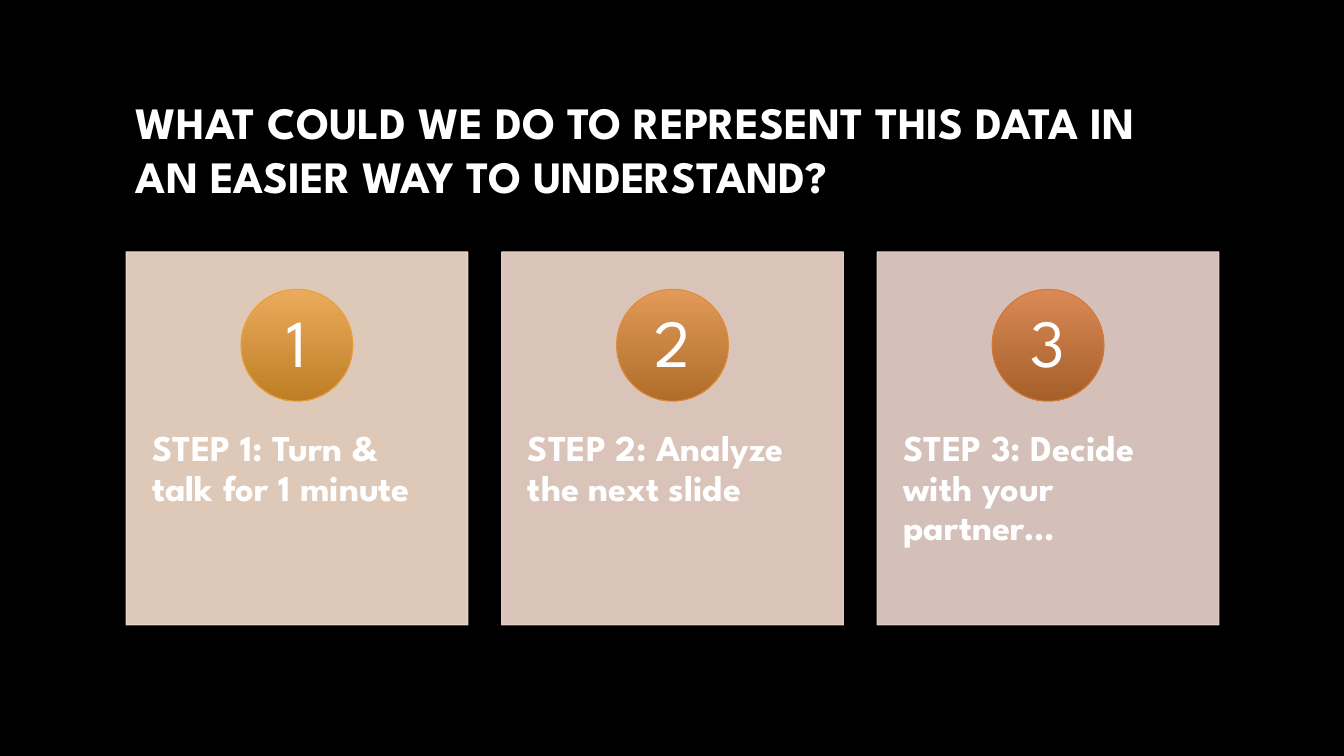
import pptx
import pptx.dml.color
import pptx.enum.shapes
import pptx.enum.text
import pptx.oxml
import pptx.oxml.ns
import pptx.util
from pptx.util import Inches

TITLE = "WHAT COULD WE DO TO REPRESENT THIS DATA IN AN EASIER WAY TO UNDERSTAND?"
STEPS = [
    {"number": "1", "text": "STEP 1: Turn & talk for 1 minute",
     "card": "F7DFCE", "top": "EBAB5C", "bottom": "BD7E25", "rim": "E9A039"},
    {"number": "2", "text": "STEP 2: Analyze the next slide",
     "card": "F2DACE", "top": "E29A59", "bottom": "AF6D29", "rim": "DF8C36"},
    {"number": "3", "text": "STEP 3: Decide with your partner…",
     "card": "EDD5CE", "top": "D98957", "bottom": "A65F28", "rim": "D57A34"},
]
THEME = {
    "font": "League Spartan", "background": "000000", "text": "FFFFFF",
    "title_size": 32, "step_size": 26, "number_size": 48,
    "line_width": 0.75, "card_opacity": 90,
}

SLIDE_WIDTH, SLIDE_HEIGHT = 13.33, 7.5
LEFT, CARD_TOP, CARD_WIDTH, CARD_HEIGHT = 1.25, 2.5, 3.39, 3.7
CARD_PITCH = 3.725
CIRCLE_TOP, CIRCLE_SIZE = 2.87, 1.11
STEP_TOP, STEP_HEIGHT = 3.91, 2.22

SHAPES = pptx.enum.shapes.MSO_SHAPE
ANCHOR = pptx.enum.text.MSO_ANCHOR
ALIGN = pptx.enum.text.PP_ALIGN


def color(value):
    return pptx.dml.color.RGBColor.from_string(value)


def write_text(shape, text, size, bold=False, align=ALIGN.LEFT,
               anchor=ANCHOR.TOP, insets=(0.1, 0.05), spacing=1.0):
    frame = shape.text_frame
    frame.word_wrap = True
    frame.vertical_anchor = anchor
    frame.margin_left = frame.margin_right = Inches(insets[0])
    frame.margin_top = frame.margin_bottom = Inches(insets[1])
    para = frame.paragraphs[0]
    para.alignment = align
    para.line_spacing = spacing
    span = para.add_run()
    span.text = text
    span.font.name = THEME["font"]
    span.font.size = pptx.util.Pt(size)
    span.font.bold = bold
    span.font.color.rgb = color(THEME["text"])


def add_outlined(page, kind, bounds, line):
    shape = page.shapes.add_shape(kind, *map(Inches, bounds))
    shape.shadow.inherit = False
    shape.line.color.rgb = color(line)
    shape.line.width = pptx.util.Pt(THEME["line_width"])
    return shape


def set_opacity(shape, percent):
    for node in shape.element.spPr.iter(pptx.oxml.ns.qn("a:srgbClr")):
        alpha = pptx.oxml.parse_xml(
            f'<a:alpha {pptx.oxml.ns.nsdecls("a")} val="{percent * 1000}"/>')
        node.append(alpha)


def add_step(page, index, step):
    left = LEFT + index * CARD_PITCH
    card = add_outlined(page, SHAPES.RECTANGLE,
                        (left, CARD_TOP, CARD_WIDTH, CARD_HEIGHT), step["card"])
    card.fill.solid()
    card.fill.fore_color.rgb = color(step["card"])
    set_opacity(card, THEME["card_opacity"])

    box = page.shapes.add_textbox(
        *map(Inches, (left, STEP_TOP, CARD_WIDTH, STEP_HEIGHT)))
    write_text(box, step["text"], THEME["step_size"], bold=True,
               insets=(0.26, 0.36), spacing=0.9)

    circle_left = left + (CARD_WIDTH - CIRCLE_SIZE) / 2
    circle = add_outlined(page, SHAPES.OVAL,
                          (circle_left, CIRCLE_TOP, CIRCLE_SIZE, CIRCLE_SIZE),
                          step["rim"])
    circle.fill.gradient()
    circle.fill.gradient_angle = 270
    for stop, name in zip(circle.fill.gradient_stops, ("top", "bottom")):
        stop.color.rgb = color(step[name])
    write_text(circle, step["number"], THEME["number_size"], align=ALIGN.CENTER,
               anchor=ANCHOR.MIDDLE, insets=(0.09, 0.01), spacing=0.9)


def main():
    deck = pptx.Presentation()
    deck.slide_width = Inches(SLIDE_WIDTH)
    deck.slide_height = Inches(SLIDE_HEIGHT)
    page = deck.slides.add_slide(deck.slide_layouts[6])
    page.background.fill.solid()
    page.background.fill.fore_color.rgb = color(THEME["background"])

    title = page.shapes.add_textbox(*map(Inches, (LEFT, 0.67, 10.83, 1.61)))
    write_text(title, TITLE, THEME["title_size"], bold=True, anchor=ANCHOR.MIDDLE)
    for index, step in enumerate(STEPS):
        add_step(page, index, step)
    deck.save("out.pptx")


if __name__ == "__main__":
    main()
